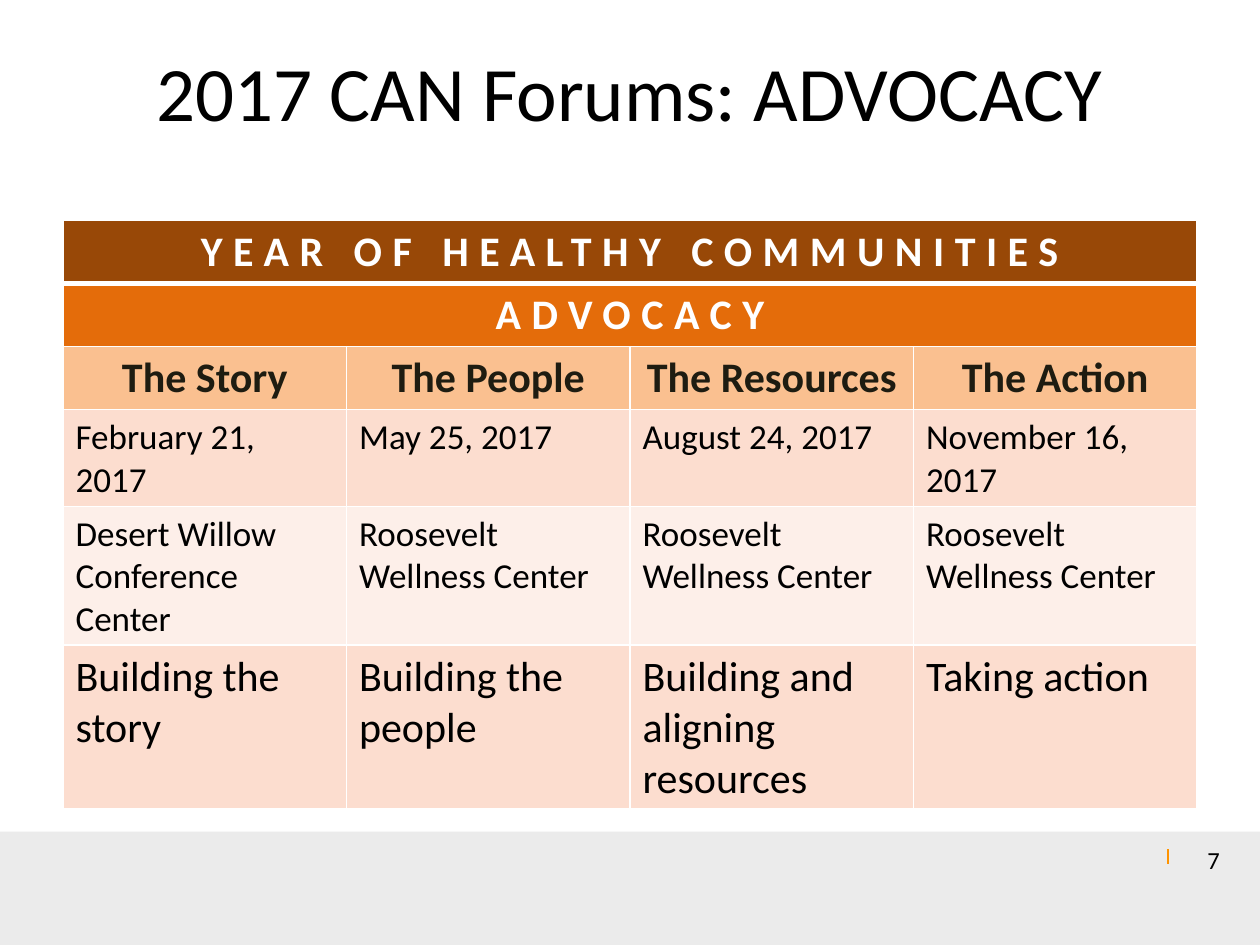
from lxml import etree
from pptx import Presentation
from pptx.dml.color import RGBColor
from pptx.enum.shapes import MSO_CONNECTOR, MSO_SHAPE
from pptx.enum.text import MSO_ANCHOR, PP_ALIGN
from pptx.oxml.ns import qn
from pptx.util import Inches, Pt

LEFT, CENTER, RIGHT = PP_ALIGN.LEFT, PP_ALIGN.CENTER, PP_ALIGN.RIGHT
TOP, MIDDLE = MSO_ANCHOR.TOP, MSO_ANCHOR.MIDDLE
RECTANGLE, STRAIGHT = MSO_SHAPE.RECTANGLE, MSO_CONNECTOR.STRAIGHT

FONT = "Calibri"
BLACK = RGBColor(0x00, 0x00, 0x00)
WHITE = RGBColor(0xFF, 0xFF, 0xFF)
DARK = RGBColor(0x1E, 0x1C, 0x11)
GREY = RGBColor(0xD9, 0xD9, 0xD9)
AMBER = RGBColor(0xFF, 0x93, 0x00)
BROWN = RGBColor(0x98, 0x48, 0x07)
ORANGE = RGBColor(0xE4, 0x6C, 0x0A)
PEACH = RGBColor(0xFA, 0xC0, 0x90)
PINK = RGBColor(0xFC, 0xDD, 0xCF)
PALE_PINK = RGBColor(0xFD, 0xEF, 0xE9)


def write(frame, text, size, color, align, bold=False):
    paragraph = frame.paragraphs[0]
    paragraph.alignment = align
    run = paragraph.add_run()
    run.text = text
    run.font.name = FONT
    run.font.size = Pt(size)
    run.font.bold = bold
    run.font.color.rgb = color
    return run


def set_borders(cell, top, bottom):
    """Give the cell white borders; top and bottom are widths in points."""
    properties = cell._tc.get_or_add_tcPr()
    sides = (("a:lnL", 1), ("a:lnR", 1), ("a:lnT", top), ("a:lnB", bottom))
    for position, (tag, width) in enumerate(sides):
        border = etree.Element(qn(tag), w=str(Pt(width)))
        fill = etree.SubElement(border, qn("a:solidFill"))
        etree.SubElement(fill, qn("a:srgbClr"), val=str(WHITE))
        properties.insert(position, border)


prs = Presentation()
prs.slide_width, prs.slide_height = Inches(10), Inches(7.5)
slide = prs.slides.add_slide(prs.slide_layouts[5])

# Footer band, divider and page number
band = slide.shapes.add_shape(RECTANGLE, Inches(0), Inches(6.6), Inches(10), Inches(0.9))
band.shadow.inherit = False
band.fill.solid()
band.fill.fore_color.rgb = GREY
band.line.fill.background()
band_color = band._element.spPr.find(qn("a:solidFill")).find(qn("a:srgbClr"))
etree.SubElement(band_color, qn("a:alpha"), val="51000")

divider = slide.shapes.add_connector(
    STRAIGHT, Inches(9.27), Inches(6.74), Inches(9.27), Inches(6.86))
divider.line.color.rgb = AMBER
divider.line.width = Pt(0.75)
etree.SubElement(divider._element.spPr, qn("a:effectLst"))

page_number = slide.shapes.add_textbox(
    Inches(9.26), Inches(6.62), Inches(0.52), Inches(0.4)).text_frame
page_number.word_wrap = True
page_number.vertical_anchor = MIDDLE
write(page_number, "7", 14, BLACK, RIGHT)

# Title
title = slide.shapes.title
title.left, title.top = Inches(0.5), Inches(0.3)
title.width, title.height = Inches(9), Inches(1.25)
title.text_frame.vertical_anchor = TOP
write(title.text_frame, "2017 CAN Forums: ADVOCACY", 44, BLACK, CENTER)

# Forum schedule: texts, fill, size, colour, alignment, bold, letter spacing
WELLNESS = "Roosevelt Wellness Center"
schedule = [
    (["YEAR OF HEALTHY COMMUNITIES"], BROWN, 24, WHITE, CENTER, True, 6),
    (["ADVOCACY"], ORANGE, 24, WHITE, CENTER, True, 6),
    (["The Story", "The People", "The Resources", "The Action"],
     PEACH, 24, DARK, CENTER, True, 0),
    (["February 21, 2017", "May 25, 2017", "August 24, 2017", "November 16, 2017"],
     PINK, 20, BLACK, LEFT, False, 0),
    (["Desert Willow Conference Center", WELLNESS, WELLNESS, WELLNESS],
     PALE_PINK, 20, BLACK, LEFT, False, 0),
    (["Building the story", "Building the people",
      "Building and aligning resources", "Taking action"],
     PINK, 24, BLACK, LEFT, False, 0),
]
COLUMNS = 4
table = slide.shapes.add_table(
    len(schedule), COLUMNS, Inches(0.5), Inches(1.75), Inches(9), Inches(2.46)).table

for row, (texts, fill, size, color, align, bold, spacing) in enumerate(schedule):
    table.rows[row].height = Inches(0.41)
    if len(texts) == 1:
        table.cell(row, 0).merge(table.cell(row, COLUMNS - 1))
    for column in range(COLUMNS):
        cell = table.cell(row, column)
        cell.fill.solid()
        cell.fill.fore_color.rgb = fill
        set_borders(cell, 3 if row == 1 else 1, 3 if row == 0 else 1)
        if column < len(texts):
            run = write(cell.text_frame, texts[column], size, color, align, bold)
            if spacing:
                run.font._element.set("spc", str(spacing * 100))

prs.save("out.pptx")
